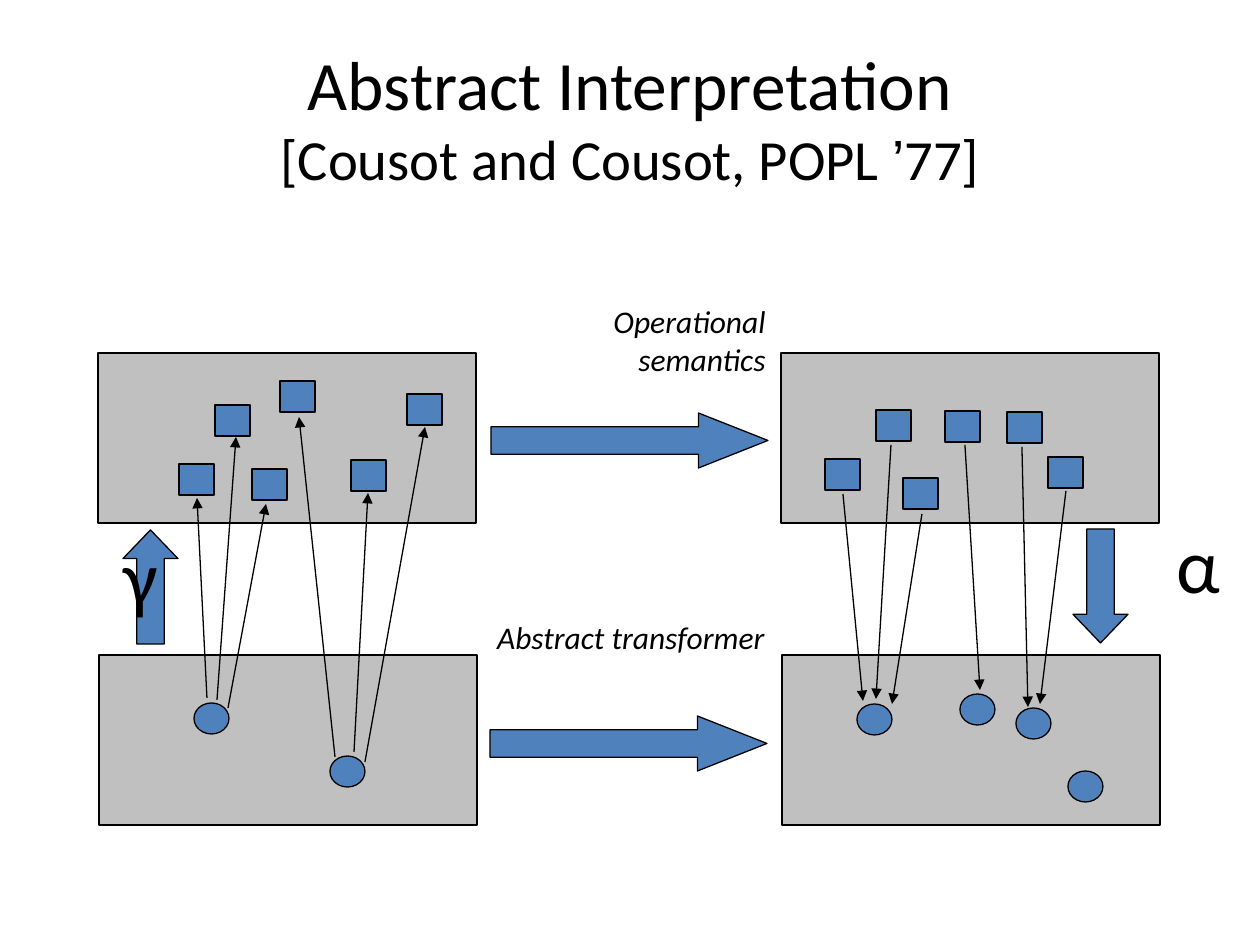
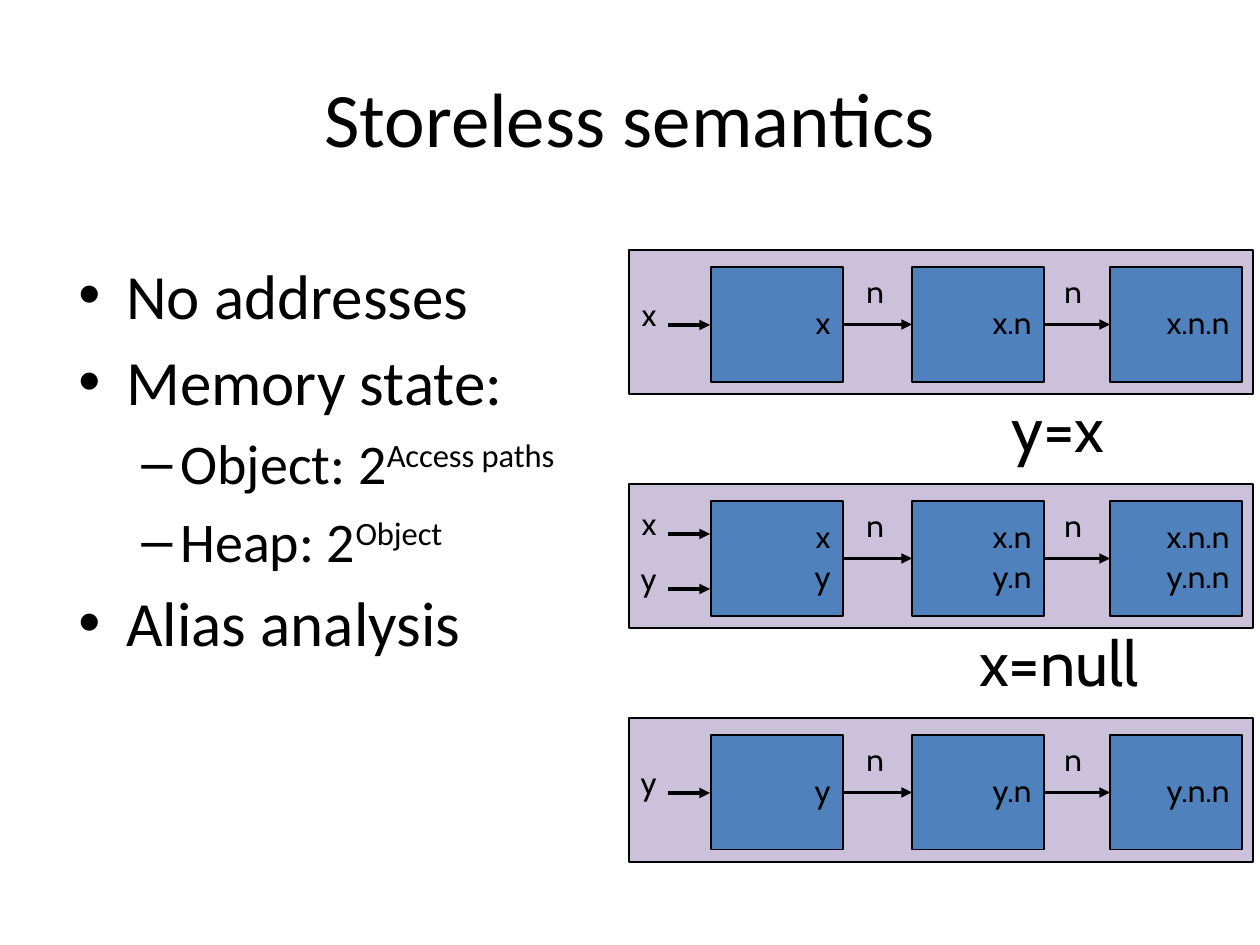
from lxml import etree
from pptx import Presentation
from pptx.dml.color import RGBColor
from pptx.enum import shapes, text
from pptx.oxml import ns
from pptx import util as u

PX = 914400 // 126
COLOURS = {"ink": "000000", "domain": "C0C0C0", "element": "4F81BD", "heap": "CCC1DA"}
SHAPE = shapes.MSO_SHAPE
ALIGN = text.PP_ALIGN
ANCHOR = text.MSO_ANCHOR


class Deck:
    """Holds the shared style and the current slide, and draws each kind of element."""

    def __init__(self):
        self.deck = Presentation()
        self.deck.slide_width, self.deck.slide_height = u.Inches(10), u.Inches(7.5)
        self.slide = None

    def px(self, *lengths):
        return [u.Emu(length * PX) for length in lengths]

    def colour(self, name):
        return RGBColor.from_string(COLOURS[name])

    def new_slide(self):
        self.slide = self.deck.slides.add_slide(self.deck.slide_layouts[6])

    def run(self, paragraph, words, size=18, font="Calibri", italic=False, raised=False):
        run = paragraph.add_run()
        run.text = words
        run.font.size, run.font.name = u.Pt(size), font
        run.font.color.rgb = self.colour("ink")
        if italic:
            run.font.italic = True
        if raised:
            run.font._element.set("baseline", "30000")

    def paragraphs(self, frame, count, align):
        frame.word_wrap = True
        for _ in range(count - 1):
            frame.add_paragraph()
        for paragraph in frame.paragraphs:
            paragraph.alignment = align
        return frame.paragraphs

    def frame(self, box):
        return self.slide.shapes.add_textbox(*self.px(*box)).text_frame

    def title(self, *lines):
        frame = self.frame((63, 38, 1134, 157))
        frame.vertical_anchor = ANCHOR.MIDDLE
        heading = self.paragraphs(frame, 1, ALIGN.CENTER)[0]
        for number, (size, *pieces) in enumerate(lines):
            if number:
                heading.add_line_break()
            for words, font in pieces:
                self.run(heading, words, size, font)

    def label(self, box, words, size=18, font="Calibri", italic=False, spacing=None):
        line = self.paragraphs(self.frame(box), 1, ALIGN.RIGHT)[0]
        line.line_spacing = spacing
        self.run(line, words, size, font, italic)

    def bullets(self, box, items):
        lines = self.paragraphs(self.frame(box), len(items), ALIGN.LEFT)
        for line, (level, words, exponent) in zip(lines, items):
            size, margin, hang, mark = ((36, 48, 48, "•"), (32, 102, 39, "–"))[level]
            line.level, line.space_before = level, u.Pt(6)
            props = line._p.get_or_add_pPr()
            props.set("marL", str(margin * PX))
            props.set("indent", str(-hang * PX))
            etree.SubElement(props, ns.qn("a:buFont")).set("typeface", "Arial")
            etree.SubElement(props, ns.qn("a:buChar")).set("char", mark)
            self.run(line, words, size)
            if exponent:
                self.run(line, exponent, size, raised=True)

    def shape(self, kind, box, fill="element", adjust=()):
        shape = self.slide.shapes.add_shape(kind, *self.px(*box))
        shape.shadow.inherit = False
        shape.fill.solid()
        shape.fill.fore_color.rgb = self.colour(fill)
        shape.line.color.rgb = self.colour("ink")
        shape.line.width = u.Pt(0.75)
        for number, value in enumerate(adjust):
            shape.adjustments[number] = value
        return shape

    def cell(self, box, names):
        cell = self.shape(SHAPE.RECTANGLE, box)
        cell.text_frame.vertical_anchor = ANCHOR.MIDDLE
        lines = self.paragraphs(cell.text_frame, len(names), ALIGN.RIGHT)
        for line, name in zip(lines, names):
            line.line_spacing, line.space_before = 0.9, u.Pt(3.6)
            self.run(line, name, 18, "Cabin")
        return cell

    def arrow(self, ends, width=0.75):
        arrow = self.slide.shapes.add_connector(shapes.MSO_CONNECTOR.STRAIGHT, *self.px(*ends))
        arrow.line.color.rgb = self.colour("ink")
        arrow.line.width = u.Pt(width)
        props = arrow._element.spPr
        etree.SubElement(props.find(ns.qn("a:ln")), ns.qn("a:tailEnd")).set("type", "triangle")
        etree.SubElement(props, ns.qn("a:effectLst"))
        return arrow

    def link(self, source, target):
        arrow = self.arrow((0, 0, 0, 0), 2)
        arrow.begin_connect(source, 3)
        arrow.end_connect(target, 1)


def abstract_interpretation(deck):
    deck.new_slide()
    deck.title((39.6, ("Abstract Interpretation", "Calibri")),
               (32.4, ("[Cousot and Cousot, POPL ", "Calibri"), ("’", "Arial"), ("77]", "Calibri")))
    for left, top in ((98, 353), (781, 353), (99, 655), (782, 655)):
        deck.shape(SHAPE.RECTANGLE, (left, top, 378, 170), "domain")
    for left, top, step in ((491, 413, "Operational semantics"), (490, 716, "Abstract transformer")):
        deck.label((left - 21, top - 117 + (left == 490) * 13, 308, 113), step, italic=True)
        deck.shape(SHAPE.RIGHT_ARROW, (left, top, 277, 55), adjust=(0.5, 1.264))

    abstract_values = ((194, 703), (330, 756), (857, 704), (960, 694), (1016, 708), (1068, 771))
    concrete_states = ((215, 405), (351, 460), (407, 394), (179, 464), (280, 381), (252, 469),
                       (876, 410), (1007, 412), (1048, 457), (825, 459), (945, 411), (903, 478))
    for kind, places in ((SHAPE.OVAL, abstract_values), (SHAPE.RECTANGLE, concrete_states)):
        for left, top in places:
            deck.shape(kind, (left, top, 35, 31))

    for kind, left, top, symbol, symbol_left, symbol_top in (
            (SHAPE.UP_ARROW, 123, 530, "γ", 42, 522), (SHAPE.DOWN_ARROW, 1073, 529, "α", 1105, 510)):
        deck.shape(kind, (left, top, 55, 114), adjust=(0.5, 0.521))
        deck.label((symbol_left, symbol_top, 128, 105), symbol, 44)

    concretization = ((207, 698, 197, 498), (217, 700, 236, 437), (228, 708, 266, 504),
                      (335, 757, 299, 417), (354, 752, 368, 493), (365, 762, 425, 427))
    abstraction = ((843, 494, 863, 701), (891, 445, 876, 699), (922, 514, 892, 704),
                   (965, 445, 980, 690), (1022, 447, 1028, 707), (1066, 491, 1040, 704))
    for ends in concretization + abstraction:
        deck.arrow(ends)


def heap(deck, top, variables):
    deck.shape(SHAPE.RECTANGLE, (629, top, 624, 144), "heap")
    offsets = (39,) if len(variables) == 1 else (14, 69)
    for variable, offset in zip(variables, offsets):
        deck.label((596, top + offset, 73, 63), variable, font="Cabin")
        deck.arrow((668, top + offset + 36, 710, top + offset + 36), 2)
    cells = [deck.cell((left, top + 17, 132, 115), [name + ".n" * depth for name in variables])
             for depth, left in enumerate((711, 912, 1110))]
    for source, target, left in zip(cells, cells[1:], (854, 1052)):
        deck.link(source, target)
        deck.label((left, top + 16, 42, 63), "n", font="Cabin")


def storeless_semantics(deck):
    deck.new_slide()
    deck.title((44, ("Storeless semantics", "Calibri")))
    deck.bullets((66, 250, 582, 577), (
        (0, "No addresses", ""), (0, "Memory state:", ""), (1, "Object: 2", "Access paths"),
        (1, "Heap: 2", "Object"), (0, "Alias analysis", "")))
    for number, variables in enumerate(("x", "xy", "y")):
        heap(deck, 250 + 234 * number, variables)
    for left, top, statement in ((774, 392, "y=x"), (808, 626, "x=null")):
        deck.label((left, top, 343, 81), statement, 36, "Cabin", spacing=0.9)


def main():
    deck = Deck()
    abstract_interpretation(deck)
    storeless_semantics(deck)
    deck.deck.save("out.pptx")


if __name__ == "__main__":
    main()
